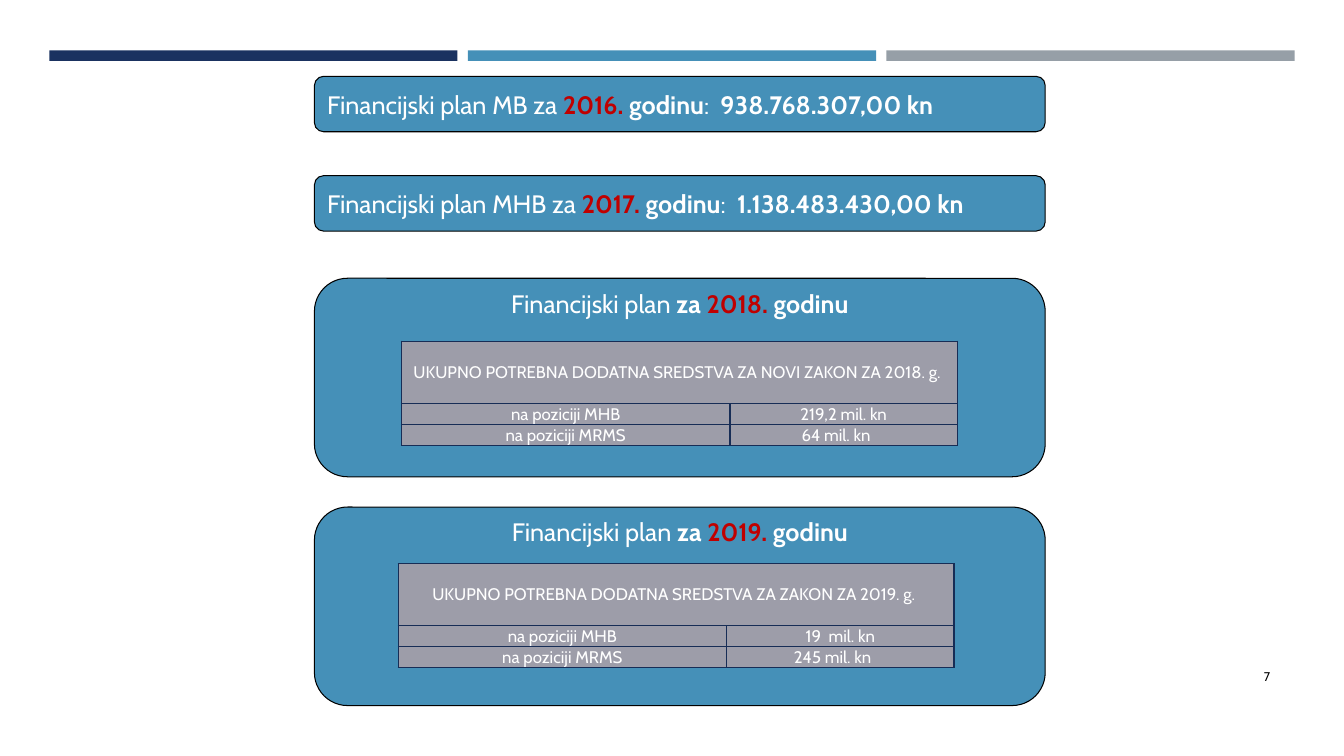
from dataclasses import dataclass

from pptx import Presentation
from pptx.dml.color import RGBColor
from pptx.enum.shapes import MSO_SHAPE
from pptx.enum.text import MSO_ANCHOR, PP_ALIGN
from pptx.oxml import parse_xml
from pptx.oxml.ns import nsdecls
from pptx.util import Pt

RECTANGLE = MSO_SHAPE.RECTANGLE
ROUNDED = MSO_SHAPE.ROUNDED_RECTANGLE
TOP, MIDDLE = MSO_ANCHOR.TOP, MSO_ANCHOR.MIDDLE
LEFT, CENTER, RIGHT = PP_ALIGN.LEFT, PP_ALIGN.CENTER, PP_ALIGN.RIGHT


@dataclass(frozen=True)
class Theme:
    font: str = "Cabin"
    navy: str = "1A3260"
    blue: str = "4590B8"
    gray: str = "969FA7"
    cell: str = "9D9DA9"
    border: str = "172D56"
    year: str = "C00000"
    white: str = "FFFFFF"
    black: str = "000000"
    heading_size: int = 18
    table_size: int = 12
    number_size: int = 9


THEME = Theme()
PANEL_LEFT, PANEL_WIDTH = 224.6, 522
PLAN_HEIGHT, PANEL_HEIGHT = 39.6, 141.8
COLUMN_WIDTHS = (234.7, 162.4)
ROW_HEIGHTS = (44.6, 15, 15)


def rgb(value):
    return RGBColor.from_string(value)


def style_paragraph(paragraph, size, color, alignment):
    paragraph.alignment = alignment
    font = paragraph.font
    font.name, font.size = THEME.font, Pt(size)
    font.color.rgb = rgb(color)


def add_block(slide, kind, left, top, width, height, fill):
    shape = slide.shapes.add_shape(kind, Pt(left), Pt(top), Pt(width), Pt(height))
    shape.shadow.inherit = False
    shape.fill.solid()
    shape.fill.fore_color.rgb = rgb(fill)
    shape.line.fill.background()
    return shape


def add_header_bars(slide):
    for index, color in enumerate((THEME.navy, THEME.blue, THEME.gray)):
        add_block(slide, RECTANGLE, 35.2 + index * 299, 36, 291.6, 7.5, color)


def add_panel(slide, top, height, runs, anchor, alignment):
    """Add a rounded panel; runs are (text, color, bold) triples."""
    panel = add_block(slide, ROUNDED, PANEL_LEFT, top, PANEL_WIDTH, height, THEME.blue)
    panel.line.color.rgb = rgb(THEME.black)
    panel.line.width = Pt(0.75)
    frame = panel.text_frame
    frame.vertical_anchor = anchor
    frame.margin_top = frame.margin_bottom = 0
    paragraph = frame.paragraphs[0]
    style_paragraph(paragraph, THEME.heading_size, THEME.white, alignment)
    for text, color, bold in runs:
        run = paragraph.add_run()
        run.text = text
        run.font.bold = bold
        run.font.color.rgb = rgb(color)


def add_plan(slide, top, institution, year, amount):
    runs = [
        (f"Financijski plan {institution} za ", THEME.white, False),
        (f"{year}.", THEME.year, True),
        (" godinu", THEME.white, True),
        (":  ", THEME.white, False),
        (amount, THEME.white, True),
    ]
    add_panel(slide, top, PLAN_HEIGHT, runs, MIDDLE, LEFT)


def add_year_panel(slide, top, year):
    runs = [
        ("Financijski plan ", THEME.white, False),
        ("za ", THEME.white, True),
        (f"{year}.", THEME.year, True),
        (" godinu", THEME.white, True),
    ]
    add_panel(slide, top, PANEL_HEIGHT, runs, TOP, CENTER)


def add_borders(cell):
    properties = cell._tc.get_or_add_tcPr()
    for index, side in enumerate("LRTB"):
        properties.insert(index, parse_xml(
            f'<a:ln{side} {nsdecls("a")} w="12700"><a:solidFill>'
            f'<a:srgbClr val="{THEME.border}"/></a:solidFill></a:ln{side}>'))


def fill_cell(cell, text, right_margin):
    cell.fill.solid()
    cell.fill.fore_color.rgb = rgb(THEME.cell)
    cell.vertical_anchor = MIDDLE
    cell.margin_left = cell.margin_top = cell.margin_bottom = 0
    cell.margin_right = Pt(right_margin)
    cell.text = text
    style_paragraph(cell.text_frame.paragraphs[0], THEME.table_size, THEME.white, CENTER)
    add_borders(cell)


def add_funds_table(slide, left, top, heading, mhb, mrms):
    table = slide.shapes.add_table(
        3, 2, Pt(left), Pt(top), Pt(sum(COLUMN_WIDTHS)), Pt(sum(ROW_HEIGHTS))).table
    table.first_row = table.horz_banding = False
    for column, width in zip(table.columns, COLUMN_WIDTHS):
        column.width = Pt(width)
    for row, height in zip(table.rows, ROW_HEIGHTS):
        row.height = Pt(height)
    table.cell(0, 0).merge(table.cell(0, 1))
    rows = [(heading, ""), ("na poziciji MHB", mhb), ("na poziciji MRMS", mrms)]
    for row_index, texts in enumerate(rows):
        for column_index, text in enumerate(texts):
            right_margin = 11 if text == mrms else 3 if text == heading else 0
            fill_cell(table.cell(row_index, column_index), text, right_margin)


def add_slide_number(slide, number):
    box = slide.shapes.add_textbox(Pt(831.6), Pt(468.7), Pt(82.8), Pt(28.8))
    frame = box.text_frame
    frame.word_wrap = True
    frame.vertical_anchor = MIDDLE
    paragraph = frame.paragraphs[0]
    paragraph.text = number
    style_paragraph(paragraph, THEME.number_size, THEME.black, RIGHT)


def main():
    presentation = Presentation()
    presentation.slide_width, presentation.slide_height = Pt(960), Pt(540)
    slide = presentation.slides.add_slide(presentation.slide_layouts[6])
    add_header_bars(slide)
    add_slide_number(slide, "7")
    add_plan(slide, 54.5, "MB", "2016", "938.768.307,00 kn")
    add_plan(slide, 125.5, "MHB", "2017", "1.138.483.430,00 kn")
    add_year_panel(slide, 198.8, "2018")
    add_funds_table(slide, 286.8, 243.8,
                    "UKUPNO POTREBNA DODATNA SREDSTVA ZA NOVI ZAKON ZA 2018. g.",
                    "219,2 mil. kn", "64 mil. kn")
    add_year_panel(slide, 362.2, "2019")
    add_funds_table(slide, 284.4, 402.4,
                    "UKUPNO POTREBNA DODATNA SREDSTVA ZA ZAKON ZA 2019. g.",
                    "19  mil. kn", "245 mil. kn")
    presentation.save("out.pptx")


if __name__ == "__main__":
    main()
